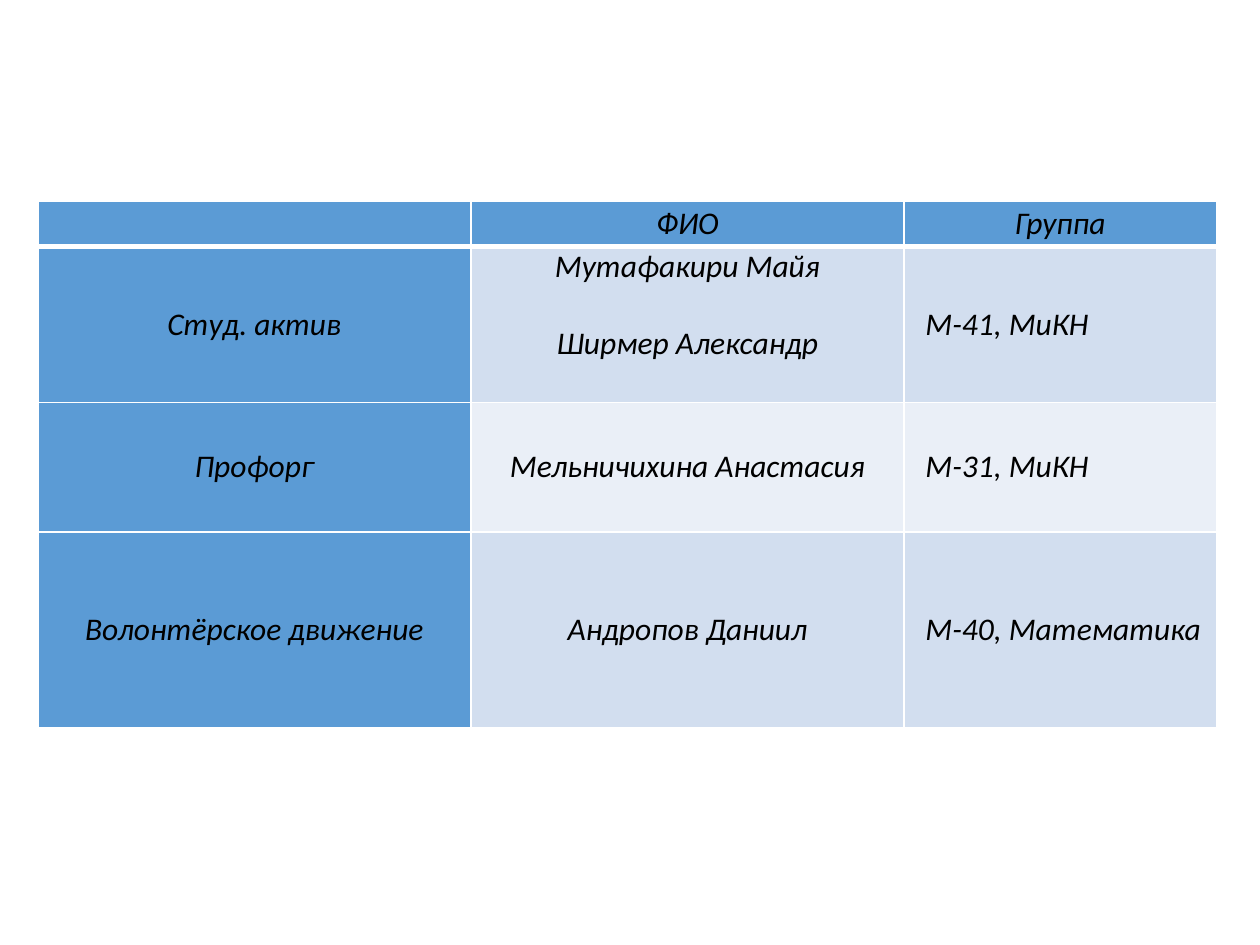
from dataclasses import dataclass

from lxml.etree import SubElement
from pptx import Presentation
from pptx.dml.color import RGBColor
from pptx.enum.text import MSO_ANCHOR, PP_ALIGN
from pptx.oxml.ns import qn
from pptx.table import _Cell
from pptx.util import Pt

BLUE = RGBColor(0x5B, 0x9B, 0xD5)
BAND_DARK = RGBColor(0xD2, 0xDE, 0xEF)
BAND_LIGHT = RGBColor(0xEA, 0xEF, 0xF7)
WHITE = RGBColor(0xFF, 0xFF, 0xFF)
BLACK = RGBColor(0, 0, 0)

LEFT, TOP = 21.6, 115.2
COLUMN_WIDTHS = (247.5, 247.5, 178.5)
CELL_MARGIN = 0.75
GROUP_INDENT = 11.5
NAME_GAP = 22


@dataclass
class Row:
    height: float
    role: str
    names: tuple[str, ...]
    group: str


ROWS = (
    Row(25.7, "", ("ФИО",), "Группа"),
    Row(89, "Студ. актив", ("Мутафакири Майя", "Ширмер Александр"), "М-41, МиКН"),
    Row(74.2, "Профорг", ("Мельничихина Анастасия",), "М-31, МиКН"),
    Row(112, "Волонтёрское движение", ("Андропов Даниил",), "М-40, Математика"),
)


def add_border(cell: _Cell, side: str, width: float) -> None:
    line = SubElement(cell._tc.get_or_add_tcPr(), qn(f"a:ln{side}"), w=str(Pt(width)))
    fill = SubElement(line, qn("a:solidFill"))
    SubElement(fill, qn("a:srgbClr"), val=str(WHITE))


def fill_cell(cell: _Cell, lines: tuple[str, ...], color: RGBColor,
              header_edges: str, indented: bool) -> None:
    for side in "LRTB":
        add_border(cell, side, 3 if side in header_edges else 1)
    cell.fill.solid()
    cell.fill.fore_color.rgb = color
    cell.margin_left = cell.margin_right = Pt(CELL_MARGIN)
    cell.margin_top = cell.margin_bottom = Pt(CELL_MARGIN)
    cell.vertical_anchor = MSO_ANCHOR.TOP if len(lines) > 1 else MSO_ANCHOR.MIDDLE
    cell.text_frame.text = "\n".join(lines)
    for index, para in enumerate(cell.text_frame.paragraphs):
        para.alignment = PP_ALIGN.LEFT if indented else PP_ALIGN.CENTER
        if indented:
            properties = para._p.get_or_add_pPr()
            properties.set("marL", str(Pt(GROUP_INDENT)))
            properties.set("indent", "0")
        if index:
            para.space_before = Pt(NAME_GAP)
        for span in para.runs:
            span.font.name = "Calibri"
            span.font.size = Pt(18)
            span.font.bold = False
            span.font.italic = True
            span.font.color.rgb = BLACK


def main() -> None:
    deck = Presentation()
    deck.slide_width, deck.slide_height = Pt(720), Pt(540)
    page = deck.slides.add_slide(deck.slide_layouts[6])
    table = page.shapes.add_table(
        len(ROWS), len(COLUMN_WIDTHS), Pt(LEFT), Pt(TOP),
        Pt(sum(COLUMN_WIDTHS)), Pt(sum(row.height for row in ROWS)),
    ).table
    for column, width in zip(table.columns, COLUMN_WIDTHS):
        column.width = Pt(width)
    for row_index, row in enumerate(ROWS):
        table.rows[row_index].height = Pt(row.height)
        band = BAND_DARK if row_index % 2 else BAND_LIGHT
        header_edges = {0: "B", 1: "T"}.get(row_index, "")
        for column_index, lines in enumerate(((row.role,), row.names, (row.group,))):
            is_heading = row_index == 0 or column_index == 0
            fill_cell(table.cell(row_index, column_index), lines,
                      BLUE if is_heading else band, header_edges,
                      row_index > 0 and column_index == 2)
    deck.save("out.pptx")


if __name__ == "__main__":
    main()
